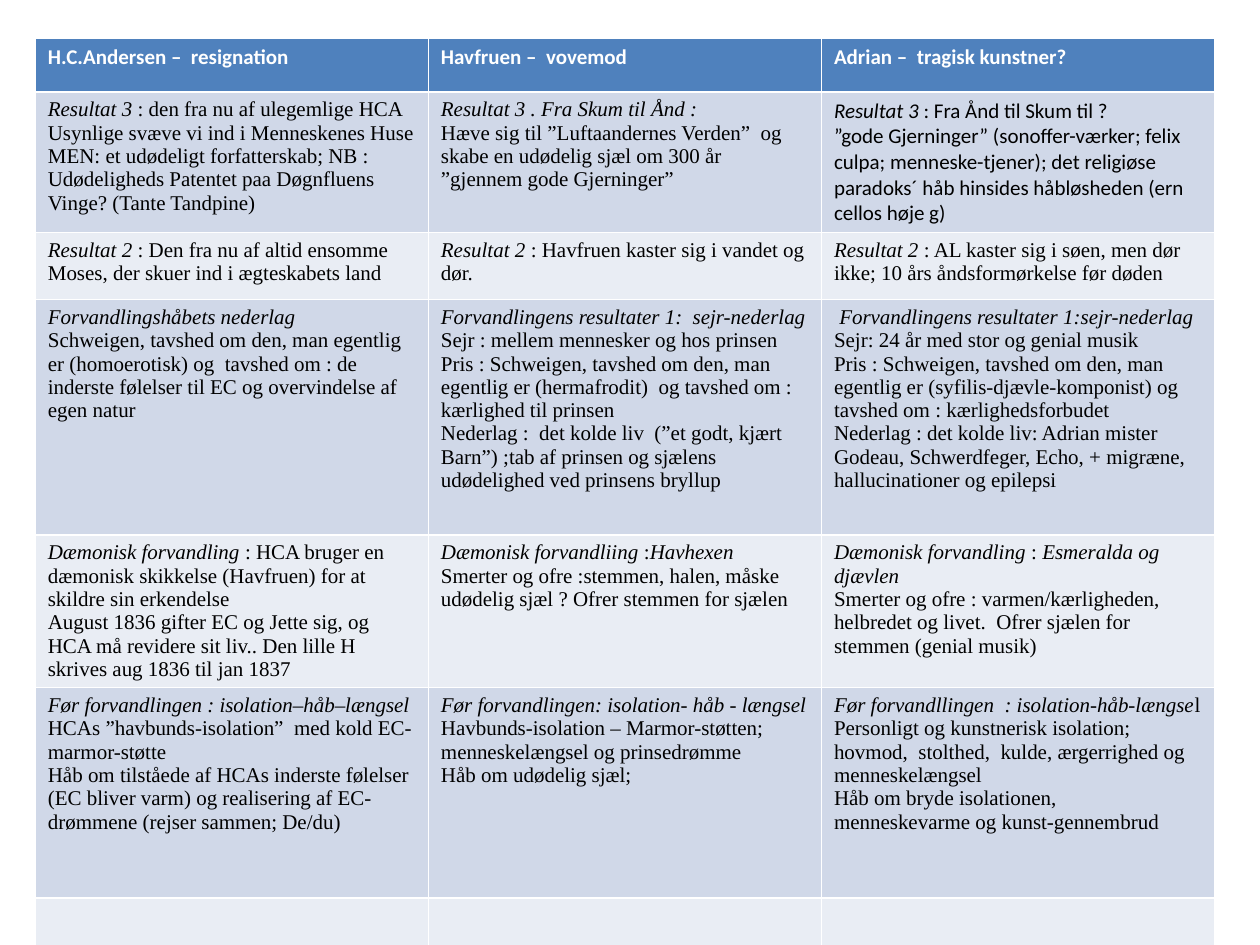
from dataclasses import dataclass

from pptx import Presentation
from pptx.dml.color import RGBColor as RGB
from pptx.util import Inches, Pt


@dataclass(frozen=True)
class Theme:
    heading_font: str = "Calibri"
    body_font: str = "Times New Roman"
    size: int = 12
    heading_text: str = "FFFFFF"
    body_text: str = "000000"
    heading_fill: str = "4F81BD"
    bands: tuple = ("D0D8E8", "E9EDF4")


THEME = Theme()
SLIDE_W, SLIDE_H = 10, 7.5
LEFT, TOP, COL_W = 0.28, 0.3, 3.12
ROW_HEIGHTS = (0.43, 0.95, 0.53, 1.87, 0.95, 1.67, 0.74)
CALIBRI_CELLS = {(1, 2)}

# Asterisks enclose italics; each line is a paragraph.
ROWS = (
    ("H.C.Andersen –  resignation", "Havfruen –  vovemod", "Adrian –  tragisk kunstner?"),
    (
        "*Resultat 3 *: den fra nu af ulegemlige HCA Usynlige svæve vi ind i Menneskenes Huse "
        "MEN: et udødeligt forfatterskab; NB : Udødeligheds Patentet paa Døgnfluens Vinge? "
        "(Tante Tandpine)",
        "*Resultat 3 . Fra Skum til Ånd :*\n"
        "Hæve sig til ”Luftaandernes Verden”  og skabe en udødelig sjæl om 300 år "
        "”gjennem gode Gjerninger”",
        "*Resultat 3 *: Fra Ånd til Skum til ?\n"
        "”gode Gjerninger” (sonoffer-værker; felix culpa; menneske-tjener); det religiøse "
        "paradoks´ håb hinsides håbløsheden (ern cellos høje g)",
    ),
    (
        "*Resultat 2 *: Den fra nu af altid ensomme Moses, der skuer ind i ægteskabets land",
        "*Resultat 2 *: Havfruen kaster sig i vandet og dør.",
        "*Resultat 2 *: AL kaster sig i søen, men dør ikke; 10 års åndsformørkelse før døden",
    ),
    (
        "*Forvandlingshåbets nederlag*\n"
        "Schweigen, tavshed om den, man egentlig er (homoerotisk) og  tavshed om : de inderste "
        "følelser til EC og overvindelse af egen natur",
        "*Forvandlingens resultater 1:  sejr-nederlag*\n"
        "Sejr : mellem mennesker og hos prinsen\n"
        "Pris : Schweigen, tavshed om den, man egentlig er (hermafrodit)  og tavshed om : "
        "kærlighed til prinsen\n"
        "Nederlag :  det kolde liv  (”et godt, kjært Barn”) ;tab af prinsen og sjælens "
        "udødelighed ved prinsens bryllup",
        " *Forvandlingens resultater 1:sejr-nederlag*\n"
        "Sejr: 24 år med stor og genial musik\n"
        "Pris : Schweigen, tavshed om den, man egentlig er (syfilis-djævle-komponist) og  "
        "tavshed om : kærlighedsforbudet\n"
        "Nederlag : det kolde liv: Adrian mister Godeau, Schwerdfeger, Echo, + migræne, "
        "hallucinationer og epilepsi",
    ),
    (
        "*Dæmonisk forvandling *: HCA bruger en dæmonisk skikkelse (Havfruen) for at skildre "
        "sin erkendelse\n"
        "August 1836 gifter EC og Jette sig, og HCA må revidere sit liv.. Den lille H skrives "
        "aug 1836 til jan 1837",
        "*Dæmonisk forvandliing *:*Havhexen*\n"
        "Smerter og ofre :stemmen, halen, måske udødelig sjæl ? Ofrer stemmen for sjælen",
        "*Dæmonisk forvandling* : *Esmeralda og djævlen*\n"
        "Smerter og ofre : varmen/kærligheden, helbredet og livet.  Ofrer sjælen for stemmen "
        "(genial musik)",
    ),
    (
        "*Før forvandlingen : isolation–håb–længsel*\n"
        "HCAs ”havbunds-isolation”  med kold EC-marmor-støtte\n"
        "Håb om tilståede af HCAs inderste følelser (EC bliver varm) og realisering af "
        "EC-drømmene (rejser sammen; De/du)",
        "*Før forvandlingen: isolation- håb - længsel*\n"
        "Havbunds-isolation – Marmor-støtten;\n"
        "menneskelængsel og prinsedrømme\n"
        "Håb om udødelig sjæl;",
        "*Før forvandllingen  : isolation-håb-længse*l\n"
        "Personligt og kunstnerisk isolation; hovmod,  stolthed,  kulde, ærgerrighed og "
        "menneskelængsel\n"
        "Håb om bryde isolationen,  menneskevarme og kunst-gennembrud",
    ),
    ("", "", ""),
)


def write_text(tf, text, font, color, bold):
    for i, line in enumerate(text.split("\n")):
        p = tf.paragraphs[0] if i == 0 else tf.add_paragraph()
        p.font.name, p.font.size, p.font.bold = font, Pt(THEME.size), bold
        p.font.color.rgb = RGB.from_string(color)
        for j, part in enumerate(line.split("*")):
            if part:
                r = p.add_run()
                r.text = part
                r.font.italic = j % 2 == 1


def fill_cell(cell, color):
    cell.fill.solid()
    cell.fill.fore_color.rgb = RGB.from_string(color)


def add_comparison(s):
    """Add the table; its default style supplies the white borders."""
    n_rows, n_cols = len(ROWS), len(ROWS[0])
    table = s.shapes.add_table(
        n_rows, n_cols, Inches(LEFT), Inches(TOP),
        Inches(n_cols * COL_W), Inches(sum(ROW_HEIGHTS)),
    ).table
    for col in table.columns:
        col.width = Inches(COL_W)
    for i, (texts, height) in enumerate(zip(ROWS, ROW_HEIGHTS)):
        table.rows[i].height = Inches(height)
        heading = i == 0
        fill = THEME.heading_fill if heading else THEME.bands[(i - 1) % 2]
        color = THEME.heading_text if heading else THEME.body_text
        for j, text in enumerate(texts):
            cell = table.cell(i, j)
            fill_cell(cell, fill)
            sans = heading or (i, j) in CALIBRI_CELLS
            font = THEME.heading_font if sans else THEME.body_font
            write_text(cell.text_frame, text, font, color, heading)


def main():
    prs = Presentation()
    prs.slide_width, prs.slide_height = Inches(SLIDE_W), Inches(SLIDE_H)
    add_comparison(prs.slides.add_slide(prs.slide_layouts[6]))
    prs.save("out.pptx")


if __name__ == "__main__":
    main()
